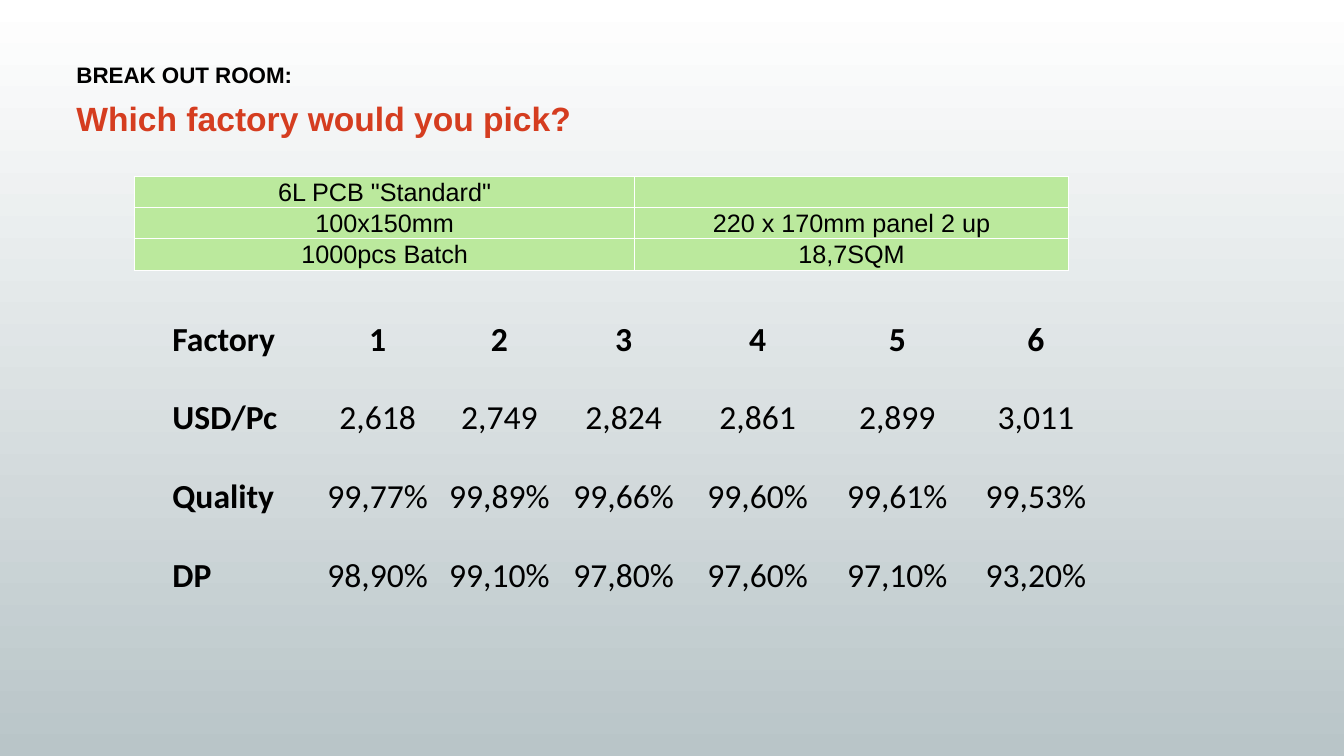
from lxml import etree
from pptx import Presentation
from pptx.dml.color import RGBColor
from pptx.enum.text import MSO_ANCHOR, PP_ALIGN
from pptx.oxml.ns import qn
from pptx.util import Pt

LEFT, CENTER = PP_ALIGN.LEFT, PP_ALIGN.CENTER
TOP, MIDDLE, BOTTOM = MSO_ANCHOR.TOP, MSO_ANCHOR.MIDDLE, MSO_ANCHOR.BOTTOM
PLAIN_TABLE = "{2D5ABB26-0587-4C30-8999-92F81FD0307C}"
BLACK, WHITE, RED = "000000", "FFFFFF", "D53D20"
GREEN, GREY = "BBE99D", "B9C5C8"

BATCH = [
    ['6L PCB "Standard"', ""],
    ["100x150mm", "220 x 170mm panel 2 up"],
    ["1000pcs Batch", "18,7SQM"],
]
FACTORIES = [
    ["Factory", "1", "2", "3", "4", "5", "6"],
    ["USD/Pc", "2,618", "2,749", "2,824", "2,861", "2,899", "3,011"],
    ["Quality", "99,77%", "99,89%", "99,66%", "99,60%", "99,61%", "99,53%"],
    ["DP", "98,90%", "99,10%", "97,80%", "97,60%", "97,10%", "93,20%"],
]


def color(value):
    return RGBColor.from_string(value)


class SlideBuilder:
    def __init__(self, deck):
        self.page = deck.slides.add_slide(deck.slide_layouts[6])

    def background(self, bottom, top):
        fill = self.page.background.fill
        fill.gradient()
        fill.gradient_angle = 90
        for stop, value in zip(fill.gradient_stops, (bottom, top)):
            stop.color.rgb = color(value)

    def style(self, para, size, font, value, bold, align=LEFT):
        para.alignment = align
        para.font.size = Pt(size)
        para.font.name = font
        para.font.bold = bold
        para.font.color.rgb = color(value)

    def heading(self, text, top, height, size, value, anchor):
        box = self.page.shapes.add_textbox(Pt(47.5), Pt(top), Pt(865.5), Pt(height))
        frame = box.text_frame
        frame.word_wrap = True
        frame.vertical_anchor = anchor
        para = frame.paragraphs[0]
        para.text = text
        self.style(para, size, "Arial", value, True)
        return para

    def borders(self, cell, value):
        properties = cell._tc.get_or_add_tcPr()
        for index, side in enumerate(("lnL", "lnR", "lnT", "lnB")):
            line = etree.Element(qn("a:" + side), w=str(Pt(1)))
            if value:
                fill = etree.SubElement(line, qn("a:solidFill"))
                etree.SubElement(fill, qn("a:srgbClr"), val=value)
            else:
                etree.SubElement(line, qn("a:noFill"))
            properties.insert(index, line)

    def table(self, rows, left, top, widths, row_height, size, font, anchor,
              fill=None, border=None, headers=False):
        shape = self.page.shapes.add_table(
            len(rows), len(widths), Pt(left), Pt(top),
            Pt(sum(widths)), Pt(row_height * len(rows)))
        table = shape.table
        table.first_row = table.horz_banding = False
        table._tbl.tblPr.find(qn("a:tableStyleId")).text = PLAIN_TABLE
        for column, width in zip(table.columns, widths):
            column.width = Pt(width)
        for row_index, values in enumerate(rows):
            table.rows[row_index].height = Pt(row_height)
            for column_index, text in enumerate(values):
                cell = table.cell(row_index, column_index)
                cell.margin_left = cell.margin_right = cell.margin_top = Pt(0.7)
                cell.margin_bottom = Pt(0)
                cell.vertical_anchor = anchor
                if fill:
                    cell.fill.solid()
                    cell.fill.fore_color.rgb = color(fill)
                else:
                    cell.fill.background()
                self.borders(cell, border)
                para = cell.text_frame.paragraphs[0]
                para.text = text
                bold = headers and 0 in (row_index, column_index)
                align = LEFT if headers and column_index == 0 else CENTER
                self.style(para, size, font, BLACK, bold, align)


def main():
    deck = Presentation()
    deck.slide_width, deck.slide_height = Pt(960), Pt(540)
    slide = SlideBuilder(deck)
    slide.background(GREY, WHITE)
    slide.heading("BREAK OUT ROOM:", 38.5, 29, 16, BLACK, MIDDLE)
    question = slide.heading("Which factory would you pick?", 60.5, 319, 24, RED, TOP)
    question.line_spacing = 1.2
    question.space_after = Pt(12)
    slide.table(FACTORIES, 122.5, 201, [103, 88.5, 85.5, 92, 99.5, 100, 98],
                56.3, 24, "Calibri", BOTTOM, headers=True)
    slide.table(BATCH, 96, 126, [357.5, 309.5], 21.4, 18, "Arial", MIDDLE,
                fill=GREEN, border=WHITE)
    deck.save("out.pptx")


if __name__ == "__main__":
    main()
